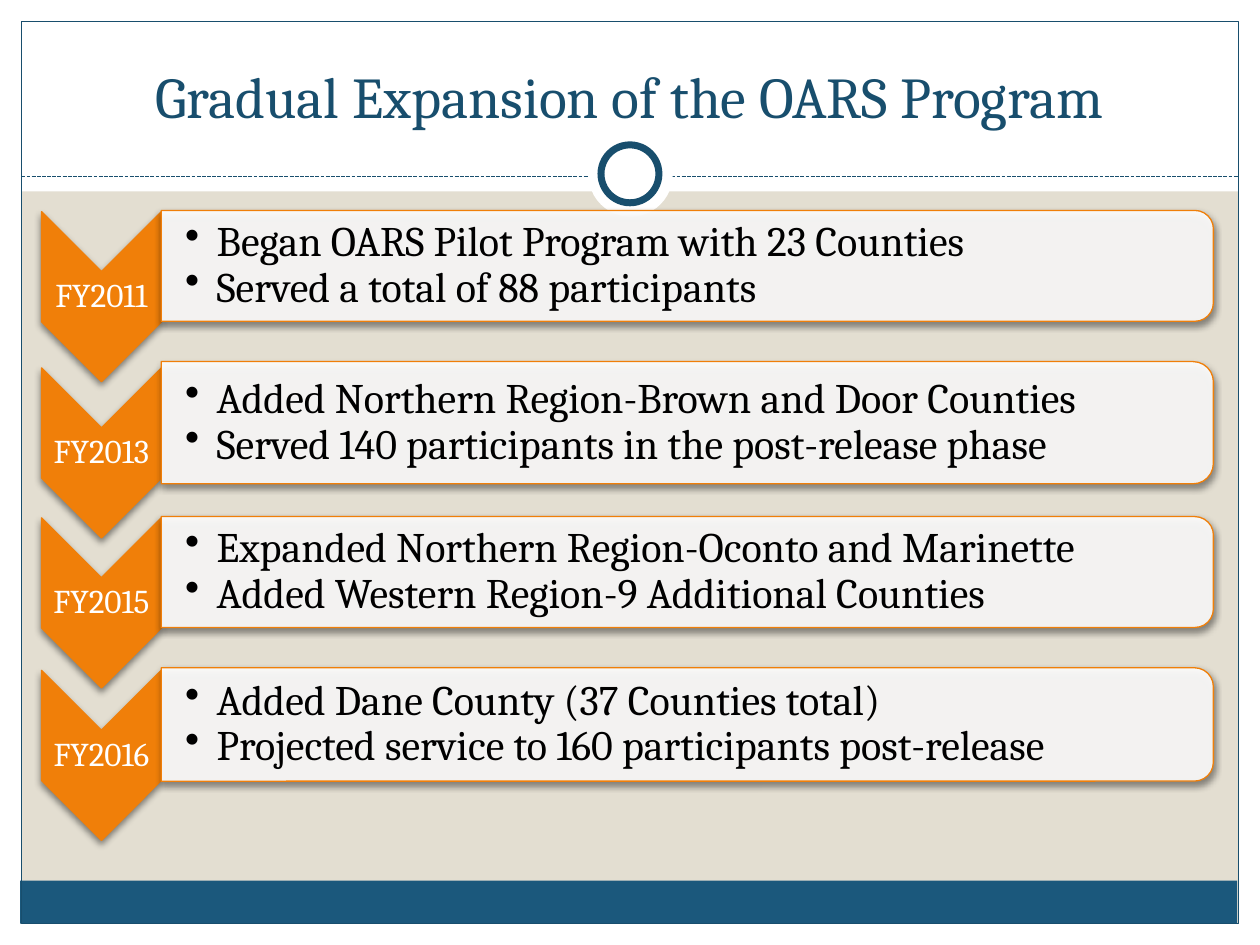
from lxml import etree
from pptx import Presentation
from pptx.dml.color import RGBColor
from pptx.enum import dml, shapes, text
from pptx.oxml import ns, parse_xml
from pptx.util import Inches, Pt

TITLE = "Gradual Expansion of the OARS Program"
PHASES = [
    ("FY2011", 1.68, 1.67, 0.88, ["Began OARS Pilot Program with 23 Counties",
                                  "Served a total of 88 participants"]),
    ("FY2013", 2.92, 2.87, 0.97, ["Added Northern Region-Brown and Door Counties",
                                  "Served 140 participants in the post-release phase"]),
    ("FY2015", 4.11, 4.1, 0.88, ["Expanded Northern Region-Oconto and Marinette",
                                 "Added Western Region-9 Additional Counties"]),
    ("FY2016", 5.32, 5.3, 0.9, ["Added Dane County (37 Counties total)",
                                "Projected service to 160 participants post-release"]),
]
FONT = "Cambria"
NAVY, BLUE, ORANGE, WHITE, SAND = "184E6D", "1B587C", "F07F09", "FFFFFF", "E3DED1"
RECT, OVAL = shapes.MSO_SHAPE.RECTANGLE, shapes.MSO_SHAPE.OVAL
FRAME = [
    (RECT, (0, 7.33, 10, 0.17), WHITE, None, 0),
    (RECT, (0, 0, 10, 1.52), WHITE, None, 0),
    (RECT, (0, 0, 0.17, 7.5), WHITE, None, 0),
    (RECT, (9.83, 0, 0.17, 7.5), WHITE, None, 0),
    (RECT, (0.16, 6.99, 9.66, 0.34), BLUE, None, 0),
    (RECT, (0.17, 0.17, 9.66, 7.16), None, NAVY, 0.75),
]
RING = [
    (OVAL, (4.67, 1.05, 0.67, 0.67), WHITE, None, 0),
    (OVAL, (4.77, 1.15, 0.46, 0.46), WHITE, NAVY, 4),
]
CHEVRON_LEFT, CHEVRON_W, CHEVRON_H = 0.33, 0.95, 1.35
LABEL_DROP, LABEL_H = 0.47, 0.41
BAR_LEFT, BAR_W = 1.28, 8.35
SHADOW = (f'<a:effectLst {ns.nsdecls("a")}><a:outerShdw blurRad="50800" dist="25400" '
          'dir="5400000" rotWithShape="0"><a:srgbClr val="000000"><a:alpha val="45000"/>'
          '</a:srgbClr></a:outerShdw></a:effectLst>')


def rgb(value):
    return RGBColor.from_string(value)


def add_outline(slide, kind, box, fill, line, width):
    shape = slide.shapes.add_shape(kind, *map(Inches, box))
    shape.shadow.inherit = False
    if fill:
        shape.fill.solid()
        shape.fill.fore_color.rgb = rgb(fill)
    else:
        shape.fill.background()
    if line:
        shape.line.color.rgb = rgb(line)
        shape.line.width = Pt(width)
    else:
        shape.line.fill.background()
    return shape


def add_turned(slide, kind, box, fill):
    left, top, width, height = box
    shift = (width - height) / 2
    shape = add_outline(slide, kind, (left + shift, top - shift, height, width),
                        fill, ORANGE, 0.75)
    shape.rotation = 90
    properties = shape._element.spPr
    properties.replace(properties.find(ns.qn("a:effectLst")), parse_xml(SHADOW))
    return shape


def add_text(slide, box, lines, size, color, frame_format, paragraph_format, bullet=False):
    frame = slide.shapes.add_textbox(*map(Inches, box)).text_frame
    for name, value in frame_format.items():
        setattr(frame, name, value)
    for index, line in enumerate(lines):
        paragraph = frame.paragraphs[0] if index == 0 else frame.add_paragraph()
        for name, value in paragraph_format.items():
            setattr(paragraph, name, value)
        run = paragraph.add_run()
        run.text = line
        for name, value in {"name": FONT, "size": Pt(size)}.items():
            setattr(run.font, name, value)
        run.font.color.rgb = rgb(color)
        if bullet:
            properties = paragraph._p.get_or_add_pPr()
            properties.set("marL", str(Inches(0.25)))
            properties.set("indent", str(-Inches(0.25)))
            etree.SubElement(properties, ns.qn("a:buChar"), char="•")


def insets(left, other):
    return {"word_wrap": True, "vertical_anchor": text.MSO_ANCHOR.MIDDLE,
            "margin_left": Inches(left), "margin_right": Inches(other),
            "margin_top": Inches(other), "margin_bottom": Inches(other)}


def add_phase(slide, year, chevron_top, bar_top, bar_height, points):
    add_turned(slide, shapes.MSO_SHAPE.CHEVRON,
               (CHEVRON_LEFT, chevron_top, CHEVRON_W, CHEVRON_H), ORANGE)
    add_text(slide, (CHEVRON_LEFT, chevron_top + LABEL_DROP, CHEVRON_W, LABEL_H), [year],
             19, WHITE, insets(0.01, 0.01),
             {"alignment": text.PP_ALIGN.CENTER, "line_spacing": 0.9})
    bar = add_turned(slide, shapes.MSO_SHAPE.ROUND_2_SAME_RECTANGLE,
                     (BAR_LEFT, bar_top, BAR_W, bar_height), WHITE)
    fill_color = bar._element.spPr.find(ns.qn("a:solidFill"))[0]
    etree.SubElement(fill_color, ns.qn("a:alpha"), val="90000")
    add_text(slide, (BAR_LEFT, bar_top + 0.04, BAR_W - 0.04, bar_height - 0.08), points,
             24, "000000", insets(0.19, 0.02),
             {"alignment": text.PP_ALIGN.LEFT, "line_spacing": 0.9}, bullet=True)


def main():
    deck = Presentation()
    deck.slide_width, deck.slide_height = Inches(10), Inches(7.5)
    slide = deck.slides.add_slide(deck.slide_layouts[6])
    slide.background.fill.solid()
    slide.background.fill.fore_color.rgb = rgb(SAND)

    for part in FRAME:
        add_outline(slide, *part)
    divider = slide.shapes.add_connector(shapes.MSO_CONNECTOR.STRAIGHT,
                                         *map(Inches, (0.17, 1.4, 9.83, 1.4)))
    divider.line.color.rgb = rgb(NAVY)
    divider.line.width = Pt(0.75)
    divider.line.dash_style = dml.MSO_LINE.SQUARE_DOT
    etree.SubElement(divider._element.spPr, ns.qn("a:effectLst"))
    for part in RING:
        add_outline(slide, *part)

    add_text(slide, (0.33, 0.25, 9.33, 0.83), [TITLE], 33, NAVY,
             {"word_wrap": True, "vertical_anchor": text.MSO_ANCHOR.BOTTOM},
             {"alignment": text.PP_ALIGN.CENTER})
    for phase in PHASES:
        add_phase(slide, *phase)
    deck.save("out.pptx")


if __name__ == "__main__":
    main()
